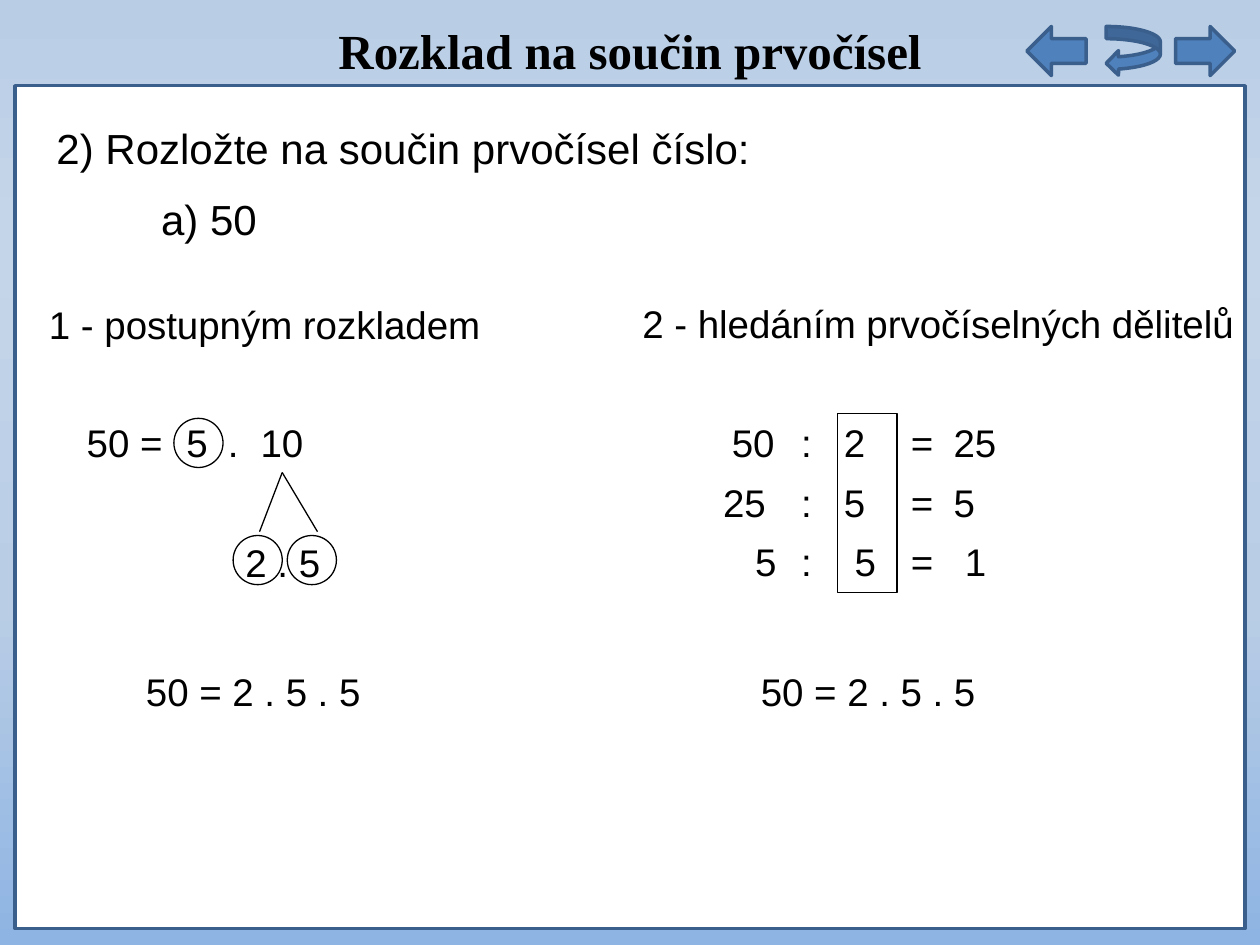
from dataclasses import dataclass

from lxml import etree
from pptx import Presentation
from pptx.dml.color import RGBColor
from pptx.enum.shapes import MSO_CONNECTOR, MSO_SHAPE
from pptx.enum.text import MSO_AUTO_SIZE, PP_ALIGN
from pptx.oxml.ns import qn
from pptx.util import Inches, Pt

LEFT, RIGHT, CENTER = PP_ALIGN.LEFT, PP_ALIGN.RIGHT, PP_ALIGN.CENTER
RECT, OVAL = MSO_SHAPE.RECTANGLE, MSO_SHAPE.OVAL
BACK, NEXT = MSO_SHAPE.LEFT_ARROW, MSO_SHAPE.RIGHT_ARROW
HOME = MSO_SHAPE.CURVED_LEFT_ARROW
GROW = MSO_AUTO_SIZE.SHAPE_TO_FIT_TEXT
STRAIGHT = MSO_CONNECTOR.STRAIGHT


@dataclass(frozen=True)
class Theme:
    ink: str = "000000"
    paper: str = "FFFFFF"
    accent: str = "4F81BD"
    edge: str = "3A5F8C"
    sky: tuple = ((0, "B9CDE5"), (25, "C5D5E9"), (64, "B9CDE5"), (100, "8EB4E3"))
    body: str = "Arial"
    head: str = "Times New Roman"
    title: int = 28
    task: int = 24
    text: int = 22
    thick: float = 2
    thin: float = 0.75


THEME = Theme()
ROW = 0.47
TOP = 3.28
RING = 0.39


def rgb(code):
    return RGBColor.from_string(code)


def paint_sky(slide):
    """Fill the background with a top-to-bottom gradient of several stops."""
    fill = slide.background.fill
    fill.gradient()
    fill.gradient_angle = 270
    stops = next(slide.element.iter(qn("a:gsLst")))
    for stop in list(stops):
        stops.remove(stop)
    for spot, code in THEME.sky:
        stop = etree.SubElement(stops, qn("a:gs"), pos=str(spot * 1000))
        etree.SubElement(stop, qn("a:srgbClr"), val=code)


def set_tabs(para, tabs):
    """Put left tab stops at the given inches from the text edge."""
    group = etree.SubElement(para._p.get_or_add_pPr(), qn("a:tabLst"))
    for tab in tabs:
        etree.SubElement(group, qn("a:tab"), pos=str(Inches(tab)), algn="l")


def style(para, size, font, bold=False):
    for run in para.runs:
        run.font.size = Pt(size)
        run.font.name = font
        run.font.bold = bold
        run.font.color.rgb = rgb(THEME.ink)


def add_text(slide, text, x, y, w, h=ROW, size=THEME.text, font=THEME.body,
             bold=False, align=LEFT, tabs=(), wrap=True):
    box = slide.shapes.add_textbox(Inches(x), Inches(y), Inches(w), Inches(h))
    frame = box.text_frame
    frame.text = text
    frame.word_wrap = wrap
    frame.auto_size = GROW
    for para in frame.paragraphs:
        para.alignment = align
        style(para, size, font, bold)
        if tabs:
            set_tabs(para, tabs)
    return frame


def add_form(slide, kind, x, y, w, h, fill=None, edge=THEME.ink, width=THEME.thin):
    form = slide.shapes.add_shape(kind, Inches(x), Inches(y), Inches(w), Inches(h))
    form.shadow.inherit = False
    if fill:
        form.fill.solid()
        form.fill.fore_color.rgb = rgb(fill)
    else:
        form.fill.background()
    form.line.color.rgb = rgb(edge)
    form.line.width = Pt(width)


def add_branch(slide, start, end):
    x, y = start
    line = slide.shapes.add_connector(
        STRAIGHT, Inches(x), Inches(y), Inches(end[0]), Inches(end[1]))
    line.line.color.rgb = rgb(THEME.ink)
    line.line.width = Pt(THEME.thin)
    etree.SubElement(line._element.spPr, qn("a:effectLst"))


def add_task(slide):
    frame = add_text(slide, "2) Rozložte na součin prvočísel číslo:\na) 50",
                     0.35, 0.92, 8.84, 1.08, THEME.task)
    lead, item = frame.paragraphs
    lead.space_after = Pt(12)
    item._p.get_or_add_pPr().set("marL", str(Inches(0.83)))


def add_tree(slide):
    """Left method: split 50 step by step and ring the primes."""
    add_text(slide, "1 - postupným rozkladem", 0.29, 2.34, 5.12)
    add_text(slide, "50 =", 0.59, TOP, 1.1)
    add_text(slide, "5\t.\t10", 1.38, TOP, 1.58, tabs=(0.33, 0.59))
    for x in (2.06, 2.52):
        add_branch(slide, (2.24, TOP + ROW), (x, TOP + 2 * ROW))
    add_text(slide, "2 . 5", 1.85, 4.23, 1.16)
    for x, y in ((1.38, 3.32), (1.85, 4.25), (2.28, 4.25)):
        add_form(slide, OVAL, x, y, RING, RING)
    add_text(slide, "50 = 2 . 5 . 5", 1.06, 5.25, 2.99)


def add_division(slide):
    """Right method: divide by primes and frame the divisors."""
    add_text(slide, "2 - hledáním prvočíselných dělitelů", 5, 2.33, 4.96, wrap=False)
    rows = (
        ("50", 5.71, LEFT, "2 ", "25", 0.34),
        ("25 ", 5.47, RIGHT, "5 ", "5", 0.34),
        ("5", 5.47, RIGHT, "5", "1", 0.43),
    )
    for i, (number, x, align, prime, rest, tab) in enumerate(rows):
        y = TOP + i * ROW
        add_text(slide, number, x, y, 0.79, align=align)
        add_text(slide, ":", 6.26, y, 0.39)
        add_text(slide, prime, 6.26, y, 0.79, align=RIGHT)
        add_text(slide, f"=\t{rest}", 7.13, y, 1.18, tabs=(tab,))
    add_form(slide, RECT, 6.65, TOP, 0.47, 1.42)
    add_text(slide, "50 = 2 . 5 . 5", 5.94, 5.25, 2.99)


def add_header(slide):
    add_text(slide, "Rozklad na součin prvočísel", 0.12, 0.11, 9.76, 0.57,
             THEME.title, THEME.head, True, CENTER)
    for kind, x, w in ((BACK, 8.15, 0.47), (HOME, 8.78, 0.43), (NEXT, 9.33, 0.47)):
        add_form(slide, kind, x, 0.21, w, 0.39, THEME.accent, THEME.edge, THEME.thick)


def main():
    deck = Presentation()
    deck.slide_width, deck.slide_height = Inches(10), Inches(7.5)
    slide = deck.slides.add_slide(deck.slide_layouts[6])
    paint_sky(slide)
    add_form(slide, RECT, 0.12, 0.68, 9.76, 6.69, THEME.paper, THEME.edge, THEME.thick)
    add_task(slide)
    add_tree(slide)
    add_division(slide)
    add_header(slide)
    deck.save("out.pptx")


if __name__ == "__main__":
    main()
